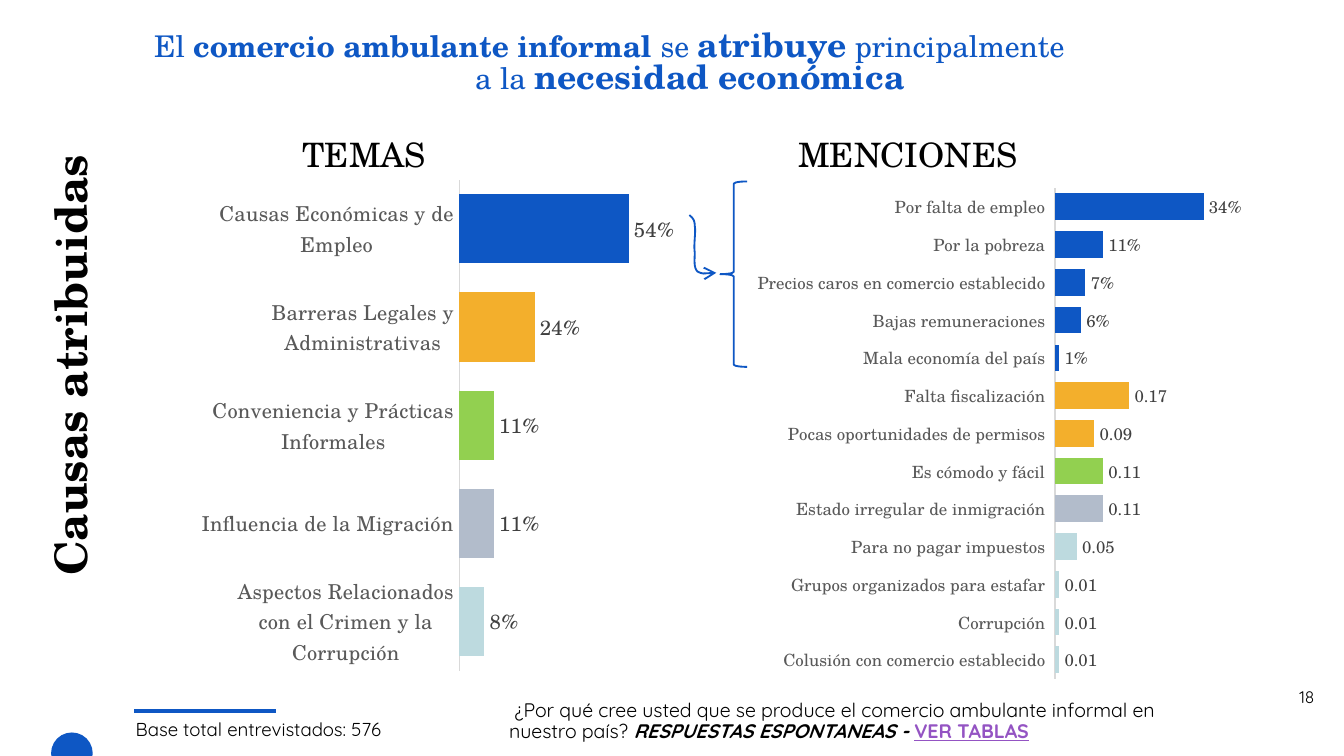
from dataclasses import dataclass
from typing import NamedTuple, Optional

from lxml.etree import SubElement
from pptx import Presentation
from pptx.chart.data import CategoryChartData
from pptx.dml.color import RGBColor
from pptx.enum.chart import XL_CHART_TYPE, XL_LABEL_POSITION, XL_TICK_LABEL_POSITION, XL_TICK_MARK
from pptx.enum.shapes import MSO_CONNECTOR, MSO_SHAPE
from pptx.enum.text import MSO_ANCHOR, MSO_AUTO_SIZE, PP_ALIGN
from pptx.oxml import parse_xml
from pptx.oxml.ns import nsdecls, qn
from pptx.util import Pt

PX = 9144  # EMU per px, 100 px to the inch
PAGE_WIDTH = 1000
SERIF, SANS = "TeX Gyre Schola", "Quicksand"
BLACK = RGBColor(0x00, 0x00, 0x00)
BLUE = RGBColor(0x0E, 0x57, 0xC4)
ORANGE = RGBColor(0xF3, 0xAF, 0x2C)
GREEN = RGBColor(0x92, 0xD0, 0x50)
SLATE = RGBColor(0xB2, 0xBC, 0xCB)
AQUA = RGBColor(0xBD, 0xDA, 0xDF)
PURPLE = RGBColor(0x94, 0x54, 0xC3)
LABEL_GRAY = RGBColor(0x59, 0x59, 0x59)
VALUE_GRAY = RGBColor(0x40, 0x40, 0x40)
AXIS_GRAY = RGBColor(0xD9, 0xD9, 0xD9)


class Frame(NamedTuple):
    left: int
    top: int
    width: int
    height: int

    def emu(self) -> list[int]:
        return [length * PX for length in self]


class Span(NamedTuple):
    text: str
    bold: Optional[bool] = None
    italic: Optional[bool] = None
    size: Optional[float] = None
    color: Optional[RGBColor] = None
    underline: Optional[bool] = None


class Bar(NamedTuple):
    label: str
    value: float
    color: RGBColor


@dataclass(frozen=True)
class BarChart:
    frame: Frame
    plot: tuple[float, float, float, float]
    size: int
    maximum: float
    series_per_color: bool
    label_end: str
    bars: list[Bar]


TOPICS = BarChart(Frame(150, 118, 381, 397), (0.5, 0.04, 0.37, 0.92), 11, 0.6, False, "", [
    Bar("Causas Económicas y de Empleo", 0.54, BLUE),
    Bar("Barreras Legales y Administrativas", 0.24, ORANGE),
    Bar("Conveniencia y Prácticas Informales", 0.11, GREEN),
    Bar("Influencia de la Migración", 0.11, SLATE),
    Bar("Aspectos Relacionados con el Crimen y la Corrupción", 0.08, AQUA),
])
MENTIONS = BarChart(Frame(492, 124, 465, 397), (0.63, 0.04, 0.28, 0.92), 9, 0.4, True, " ", [
    Bar("Por falta de empleo", 0.34, BLUE),
    Bar("Por la pobreza", 0.11, BLUE),
    Bar("Precios caros en comercio establecido", 0.07, BLUE),
    Bar("Bajas remuneraciones", 0.06, BLUE),
    Bar("Mala economía del país", 0.01, BLUE),
    Bar("Falta fiscalización", 0.17, ORANGE),
    Bar("Pocas oportunidades de permisos", 0.09, ORANGE),
    Bar("Es cómodo y fácil", 0.11, GREEN),
    Bar("Estado irregular de inmigración", 0.11, SLATE),
    Bar("Para no pagar impuestos", 0.05, AQUA),
    Bar("Grupos organizados para estafar", 0.01, AQUA),
    Bar("Corrupción", 0.01, AQUA),
    Bar("Colusión con comercio establecido", 0.01, AQUA),
])
HEADLINE = [
    [Span("El "), Span("comercio ambulante informal ", True), Span("se "),
     Span("atribuye", True, size=18), Span(" principalmente")],
    [Span("a la "), Span("necesidad económica", True, size=18)],
]
QUESTION = [
    Span(" ¿Por qué cree usted que se produce el comercio ambulante informal en nuestro país? "),
    Span("RESPUESTAS ESPONTANEAS - ", True, True),
    Span("VER TABLAS", True, color=PURPLE, underline=True),
]
# Start point, then two control points and an end point for each curve
ARROW_START = (513, 160)
ARROW_CURVES = [
    ((515, 162), (517, 163), (517, 168)),
    ((518, 172), (516, 182), (517, 188)),
    ((517, 193), (516, 199), (519, 202)),
    ((522, 204), (527, 204), (533, 203)),
]


def style_font(font, name: str, size: float, color: RGBColor, bold: Optional[bool] = None) -> None:
    font.name, font.size, font.bold = name, Pt(size), bold
    font.color.rgb = color


def write(box, lines: list[list[Span]], name: str, size: float, color: RGBColor = BLACK,
          align=PP_ALIGN.LEFT, spacing: float = 1.0, bold: Optional[bool] = None,
          anchor=MSO_ANCHOR.TOP) -> None:
    frame = box.text_frame
    frame.word_wrap, frame.auto_size, frame.vertical_anchor = True, MSO_AUTO_SIZE.NONE, anchor
    for index, spans in enumerate(lines):
        para = frame.add_paragraph() if index else frame.paragraphs[0]
        para.alignment, para.line_spacing, para.space_before = align, spacing, Pt(0)
        if box.is_placeholder:
            properties = para._p.get_or_add_pPr()
            properties.set("marL", "0")
            properties.set("indent", "0")
            SubElement(properties, qn("a:buNone"))
        style_font(para.font, name, size, color, bold)
        for span in spans:
            run = para.add_run()
            run.text = span.text
            font = run.font
            font.bold, font.italic, font.underline = span.bold, span.italic, span.underline
            if span.size:
                font.size = Pt(span.size)
            if span.color:
                font.color.rgb = span.color


def add_text(page, frame: Frame, lines: list[list[Span]], name: str, size: float, **options):
    box = page.shapes.add_textbox(*frame.emu())
    write(box, lines, name, size, **options)
    return box


def place(box, frame: Frame) -> None:
    box.left, box.top, box.width, box.height = frame.emu()


def outline(shape, width: float) -> None:
    shape.shadow.inherit = False
    shape.fill.background()
    shape.line.color.rgb, shape.line.width = BLUE, Pt(width)


def add_curved_arrow(page, steps: int = 8) -> None:
    """Trace the cubic curves with short segments and end them in an arrowhead."""
    points, start = [], ARROW_START
    for first, second, end in ARROW_CURVES:
        for step in range(1, steps + 1):
            t = step / steps
            weights = ((1 - t) ** 3, 3 * t * (1 - t) ** 2, 3 * t * t * (1 - t), t ** 3)
            corners = (start, first, second, end)
            points.append(tuple(PX * sum(w * corner[axis] for w, corner in zip(weights, corners))
                                for axis in (0, 1)))
        start = end
    builder = page.shapes.build_freeform(ARROW_START[0] * PX, ARROW_START[1] * PX)
    builder.add_line_segments(points, close=False)
    arrow = builder.convert_to_shape()
    outline(arrow, 1)
    SubElement(arrow.line._get_or_add_ln(), qn("a:tailEnd"), type="arrow")


def add_bar_chart(page, spec: BarChart) -> None:
    data = CategoryChartData()
    data.categories = [bar.label + spec.label_end for bar in spec.bars]
    colors = list(dict.fromkeys(bar.color for bar in spec.bars)) if spec.series_per_color else [BLUE]
    for number, color in enumerate(colors, 1):
        data.add_series(f"Series {number}", [
            bar.value if bar.color == color or not spec.series_per_color else None
            for bar in spec.bars])
    chart = page.shapes.add_chart(XL_CHART_TYPE.BAR_CLUSTERED, *spec.frame.emu(), data).chart
    chart.has_legend = chart.has_title = False
    style_font(chart.font, SERIF, spec.size, BLACK)

    axis = chart.category_axis
    axis.reverse_order = True
    axis.major_tick_mark = axis.minor_tick_mark = XL_TICK_MARK.NONE
    axis.tick_label_position = XL_TICK_LABEL_POSITION.NEXT_TO_AXIS
    axis.format.line.color.rgb, axis.format.line.width = AXIS_GRAY, Pt(0.75)
    style_font(axis.tick_labels.font, SERIF, spec.size, LABEL_GRAY)
    values = chart.value_axis
    values.visible = values.has_major_gridlines = False
    values.minimum_scale, values.maximum_scale = 0, spec.maximum

    plot = chart.plots[0]
    plot.gap_width, plot.vary_by_categories = 42, False
    if spec.series_per_color:
        plot.overlap = 100
    for index, (series, color) in enumerate(zip(plot.series, colors)):
        series.format.fill.solid()
        series.format.fill.fore_color.rgb = color
        labels = series.data_labels
        labels.show_value, labels.position = True, XL_LABEL_POSITION.OUTSIDE_END
        labels.number_format, labels.number_format_is_linked = "General" if index else "0%", False
        style_font(labels.font, SERIF, spec.size, VALUE_GRAY)
    if not spec.series_per_color:
        for index, bar in enumerate(spec.bars):
            fill = plot.series[0].points[index].format.fill
            fill.solid()
            fill.fore_color.rgb = bar.color

    area = chart._chartSpace.chart.plotArea
    for layout in area.findall(qn("c:layout")):
        area.remove(layout)
    sizes = "".join(f'<c:{key} val="{value}"/>' for key, value in zip("xywh", spec.plot))
    area.insert(0, parse_xml(
        f'<c:layout {nsdecls("c")}><c:manualLayout><c:layoutTarget val="inner"/>'
        f'<c:xMode val="edge"/><c:yMode val="edge"/>{sizes}</c:manualLayout></c:layout>'))


def main() -> None:
    deck = Presentation()
    deck.slide_width, deck.slide_height = PAGE_WIDTH * PX, PAGE_WIDTH * PX * 9 // 16
    page = deck.slides.add_slide(deck.slide_layouts[1])

    dot = page.shapes.add_shape(MSO_SHAPE.OVAL, *Frame(38, 545, 31, 31).emu())
    dot.shadow.inherit = False
    dot.fill.solid()
    dot.fill.fore_color.rgb = BLUE
    dot.line.fill.background()
    rule = page.shapes.add_connector(MSO_CONNECTOR.STRAIGHT, 100 * PX, 529 * PX, 205 * PX, 529 * PX)
    rule.line.color.rgb, rule.line.width = BLUE, Pt(1.75)
    SubElement(rule._element.spPr, qn("a:effectLst"))

    title, base = page.placeholders
    place(title, Frame(-214, 255, 536, 34))
    title.rotation = 270
    write(title, [[Span("Causas atribuidas")]], SERIF, 24, align=PP_ALIGN.CENTER, spacing=0.9,
          bold=True, anchor=MSO_ANCHOR.MIDDLE)
    place(base, Frame(91, 531, 504, 27))
    write(base, [[Span("Base total entrevistados: 576")]], SANS, 10, spacing=0.9)

    headline = add_text(page, Frame(50, 16, 927, 63), HEADLINE, SERIF, 16, color=BLUE,
                        align=PP_ALIGN.CENTER, spacing=0.8, anchor=MSO_ANCHOR.MIDDLE)
    headline.text_frame.margin_right = 130 * PX
    headline.text_frame.paragraphs[1]._p.pPr.set("marL", str(120 * PX))
    add_text(page, Frame(957, 506, 36, 35), [[Span("18")]], SANS, 9)

    for chart in (TOPICS, MENTIONS):
        add_bar_chart(page, chart)
    for text, frame in (("TEMAS", Frame(174, 95, 153, 40)), ("MENCIONES", Frame(556, 95, 211, 40))):
        add_text(page, frame, [[Span(text)]], SERIF, 18, align=PP_ALIGN.RIGHT)
    add_text(page, Frame(369, 516, 504, 55), [QUESTION], SANS, 10.5, spacing=0.9)

    outline(page.shapes.add_shape(MSO_SHAPE.LEFT_BRACE, *Frame(536, 135, 20, 138).emu()), 1)
    add_curved_arrow(page)
    deck.save("out.pptx")


if __name__ == "__main__":
    main()
